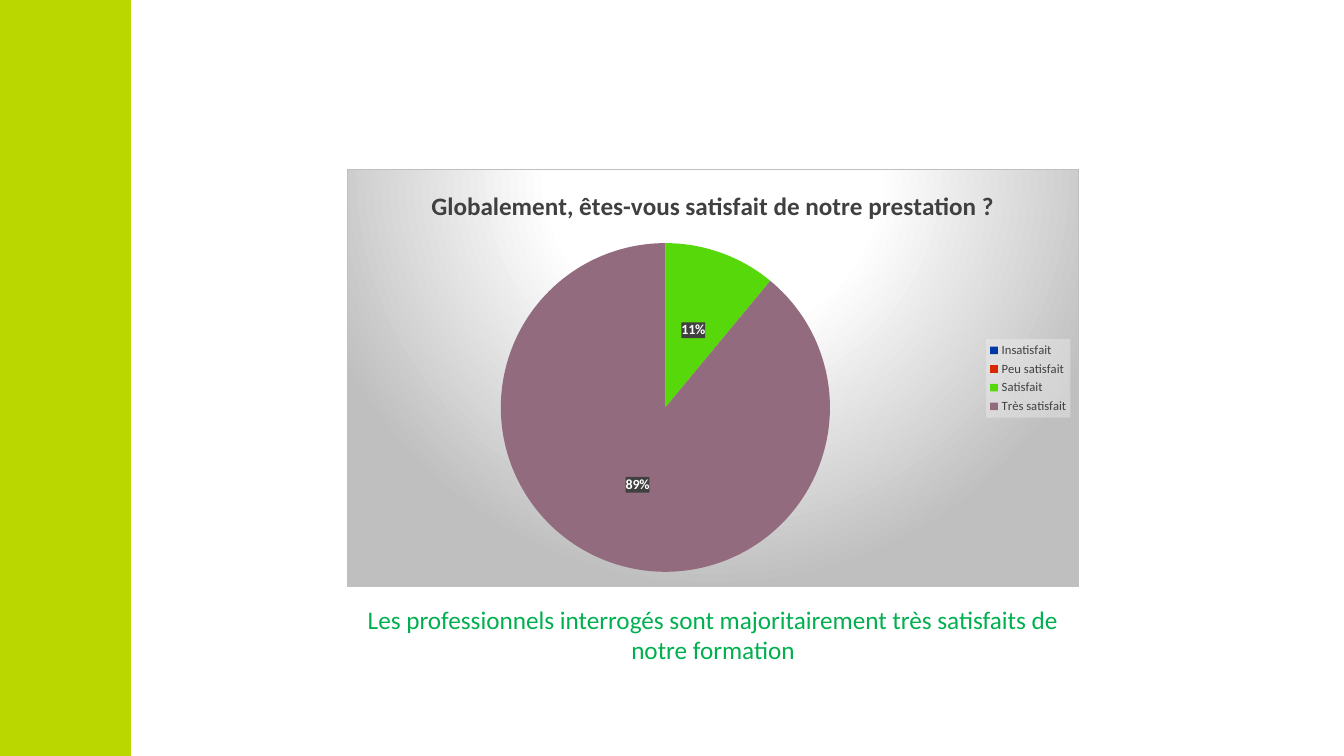
from pptx import Presentation
from pptx.chart.data import CategoryChartData
from pptx.dml.color import RGBColor
from pptx.enum.chart import XL_CHART_TYPE as ChartType
from pptx.enum.chart import XL_LABEL_POSITION as LabelPosition
from pptx.enum.chart import XL_LEGEND_POSITION as LegendPosition
from pptx.enum.shapes import MSO_SHAPE as Preset
from pptx.enum.text import MSO_AUTO_SIZE as AutoSize
from pptx.enum.text import PP_ALIGN as Align
from pptx.oxml import parse_xml
from pptx.oxml.ns import nsdecls
from pptx.util import Inches, Pt

LIME = RGBColor(0xBA, 0xD8, 0x00)
GREEN_TEXT = RGBColor(0x00, 0xB0, 0x50)
WHITE = RGBColor(0xFF, 0xFF, 0xFF)
BLACK = RGBColor(0x00, 0x00, 0x00)
DARK_GREY = RGBColor(0x40, 0x40, 0x40)
MID_GREY = RGBColor(0xBF, 0xBF, 0xBF)
PALE_GREY = RGBColor(0xF2, 0xF2, 0xF2)
BLUE = RGBColor(0x00, 0x38, 0xA8)
RED = RGBColor(0xD8, 0x27, 0x05)
GREEN = RGBColor(0x56, 0xD8, 0x0A)
MAUVE = RGBColor(0x93, 0x6B, 0x7F)

QUESTION = "Globalement, êtes-vous satisfait de notre prestation ?"
ANSWERS = [
    ("Insatisfait", 0, BLUE),
    ("Peu satisfait", 0, RED),
    ("Satisfait", 11, GREEN),
    ("Très satisfait", 89, MAUVE),
]
CONCLUSION = ("Les professionnels interrogés sont majoritairement "
              "très satisfaits de notre formation")


def chart_area(fill, line=""):
    return parse_xml(f'<c:spPr {nsdecls("c", "a")}>{fill}{line}</c:spPr>')


def clear_fill(color, opacity):
    return (f'<a:solidFill><a:srgbClr val="{color}">'
            f'<a:alpha val="{opacity * 1000}"/></a:srgbClr></a:solidFill>')


class SatisfactionSlide:
    """Style and current slide; boxes are (left, top, width, height) shares."""

    font_name = "Calibri"

    def __init__(self, presentation):
        self.size = (presentation.slide_width, presentation.slide_height)
        blank_layout = presentation.slide_layouts[6]
        self.slide = presentation.slides.add_slide(blank_layout)

    def place(self, box):
        return [round(share * length) for share, length in zip(box, self.size * 2)]

    def style(self, font, size, color, bold=False):
        font.name, font.size, font.bold = self.font_name, Pt(size), bold
        font.color.rgb = color

    def band(self, box, color):
        shape = self.slide.shapes.add_shape(Preset.RECTANGLE, *self.place(box))
        shape.shadow.inherit = False
        shape.fill.solid()
        shape.fill.fore_color.rgb = color
        shape.line.fill.background()

    def text(self, box, wording, size, color):
        shape = self.slide.shapes.add_textbox(*self.place(box))
        frame = shape.text_frame
        frame.word_wrap = True
        frame.auto_size = AutoSize.SHAPE_TO_FIT_TEXT
        frame.text = wording
        paragraph = frame.paragraphs[0]
        paragraph.alignment = Align.CENTER
        self.style(paragraph.runs[0].font, size, color)

    def pie(self, box, title, answers, plot_box):
        names, values, colors = zip(*answers)
        data = CategoryChartData(number_format="0")
        data.categories = names
        data.add_series(title, values)
        chart = self.slide.shapes.add_chart(
            ChartType.PIE, *self.place(box), data).chart
        self.style(chart.font, 10, BLACK)

        # Title
        chart.has_title = True
        title_frame = chart.chart_title.text_frame
        title_frame.text = title
        self.style(title_frame.paragraphs[0].runs[0].font, 18, DARK_GREY, True)
        chart.chart_title.include_in_layout = False

        # Slices
        plot = chart.plots[0]
        plot.vary_by_categories = True
        series = plot.series[0]
        for index, color in enumerate(colors):
            fill = series.points[index].format.fill
            fill.solid()
            fill.fore_color.rgb = color

        self.percentages(series.data_labels, values)
        self.legend(chart)
        self.background(chart)
        self.plot_area(chart, plot_box)

    def percentages(self, labels, values):
        labels.show_percentage = True
        labels.show_value = False
        labels.number_format = "0%"
        labels.number_format_is_linked = False
        labels.position = LabelPosition.CENTER
        self.style(labels.font, 10, WHITE, True)
        element = labels._element
        text_style = element.find("{*}txPr")
        text_style.addprevious(chart_area(clear_fill(DARK_GREY, 90)))
        # Empty slices carry no label
        empty = [index for index, value in enumerate(values) if value == 0]
        for position, index in enumerate(empty):
            element.insert(position, parse_xml(
                f'<c:dLbl {nsdecls("c")}><c:idx val="{index}"/>'
                '<c:delete val="1"/></c:dLbl>'))

    def legend(self, chart):
        chart.has_legend = True
        legend = chart.legend
        legend.position = LegendPosition.RIGHT
        legend.include_in_layout = False
        self.style(legend.font, 9, DARK_GREY)
        text_style = legend._element.find("{*}txPr")
        text_style.addprevious(chart_area(clear_fill(PALE_GREY, 39)))

    def background(self, chart):
        stops = "".join(
            f'<a:gs pos="{percent * 1000}"><a:srgbClr val="{color}"/></a:gs>'
            for percent, color in ((0, WHITE), (39, WHITE), (100, MID_GREY)))
        gradient = (
            f'<a:gradFill><a:gsLst>{stops}</a:gsLst><a:path path="circle">'
            '<a:fillToRect l="50000" t="-80000" r="50000" b="180000"/>'
            '</a:path></a:gradFill>')
        border = (f'<a:ln w="{Pt(0.75)}"><a:solidFill>'
                  f'<a:srgbClr val="{MID_GREY}"/></a:solidFill></a:ln>')
        chart_element = chart._chartSpace.find("{*}chart")
        chart_element.addnext(chart_area(gradient, border))

    def plot_area(self, chart, plot_box):
        shares = "".join(f'<c:{name} val="{share}"/>'
                         for name, share in zip("xywh", plot_box))
        area = chart._chartSpace.find("{*}chart/{*}plotArea")
        automatic = area.find("{*}layout")
        if automatic is not None:
            area.remove(automatic)
        area.insert(0, parse_xml(
            f'<c:layout {nsdecls("c")}><c:manualLayout>'
            '<c:layoutTarget val="inner"/><c:xMode val="edge"/>'
            f'<c:yMode val="edge"/>{shares}</c:manualLayout></c:layout>'))


def main():
    presentation = Presentation()
    presentation.slide_width = Inches(13.33)
    presentation.slide_height = Inches(7.5)
    slide = SatisfactionSlide(presentation)
    left, width = 0.258, 0.545

    # Side band
    slide.band((0, 0, 0.0975, 1), LIME)
    # Survey result
    slide.pie((left, 0.224, width, 0.553), QUESTION, ANSWERS,
              (0.21, 0.175, 0.45, 0.79))
    # Conclusion
    slide.text((left, 0.793, width, 0.095), CONCLUSION, 18, GREEN_TEXT)

    presentation.save("out.pptx")


if __name__ == "__main__":
    main()
